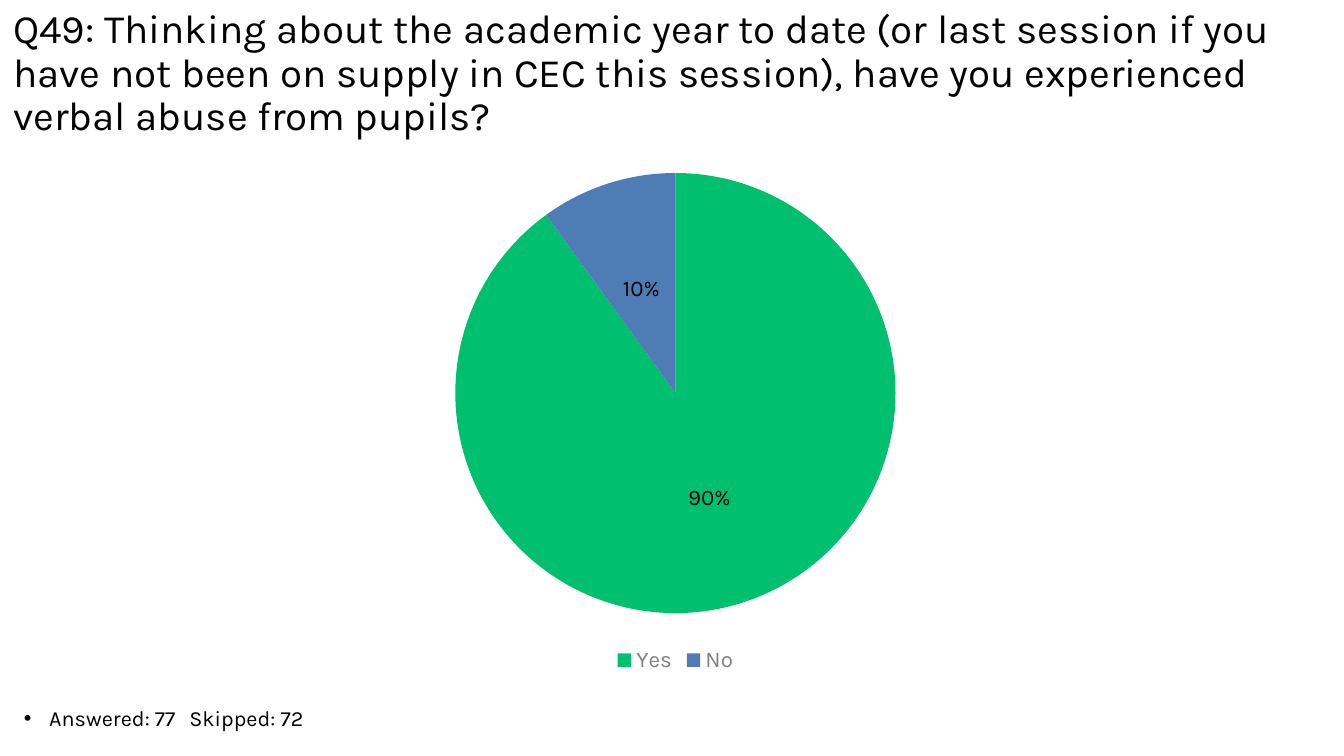
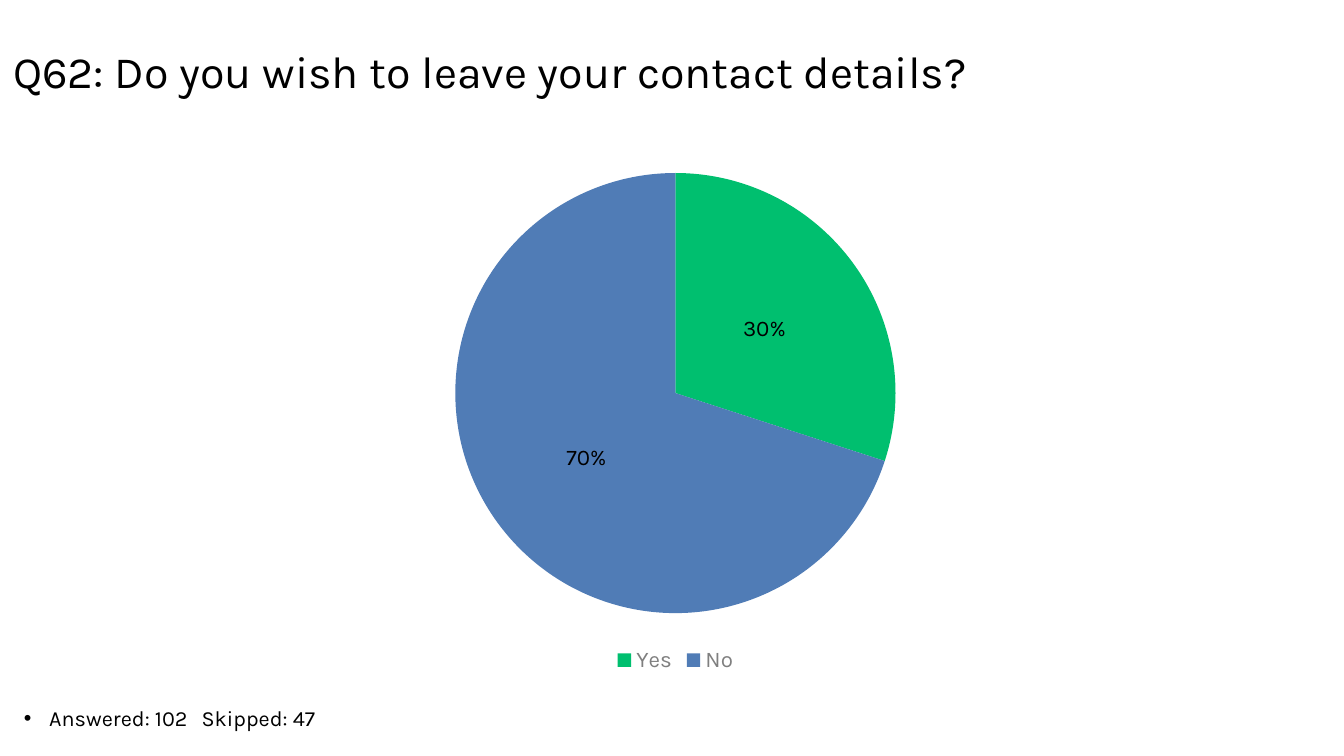
from lxml import etree
from pptx import Presentation
from pptx.chart.data import CategoryChartData
from pptx.dml.color import RGBColor
from pptx.enum.chart import XL_CHART_TYPE, XL_LABEL_POSITION, XL_LEGEND_POSITION
from pptx.enum.text import MSO_ANCHOR
from pptx.oxml.ns import qn
from pptx.util import Cm, Pt

PIE = XL_CHART_TYPE.PIE
LABEL_CENTER = XL_LABEL_POSITION.CENTER
LEGEND_BOTTOM = XL_LEGEND_POSITION.BOTTOM
TOP, MIDDLE = MSO_ANCHOR.TOP, MSO_ANCHOR.MIDDLE

FONT = "Karla"
BLACK = RGBColor(0x00, 0x00, 0x00)
GRAY = RGBColor(0x7F, 0x7F, 0x7F)
GREEN = RGBColor(0x00, 0xBF, 0x6F)
BLUE = RGBColor(0x50, 0x7C, 0xB6)
ANSWER_COLORS = {"Yes": GREEN, "No": BLUE}

# Regions as left, top, width, height in centimetres
QUESTION_BOX = (0, 0.64, 25.4, 1.52)
PIE_BOX = (3.05, 2.92, 19.43, 9.91)
COUNTS_BOX = (0.2, 13.34, 22.86, 0.66)
BULLET_INDENT = Cm(0.48)

# Question, title size, shares of Yes and No, answered, skipped, tab stop in cm
RESULTS = [
    ("Q49: Thinking about the academic year to date (or last session if you "
     "have not been on supply in CEC this session), have you experienced "
     "verbal abuse from pupils?", 21.6, (0.9, 0.1), 77, 72, 3.13),
    ("Q62: Do you wish to leave your contact details?",
     24, (0.3, 0.7), 102, 47, 3.36),
]


def style_font(font, size, color=BLACK):
    font.name = FONT
    font.size = Pt(size)
    font.color.rgb = color


def add_text(slide, box, text, *, size, anchor=TOP, line_spacing=1.0, space_before=0):
    """Add a wrapped one-paragraph text box and return its paragraph."""
    text_box = slide.shapes.add_textbox(*map(Cm, box))
    frame = text_box.text_frame
    frame.word_wrap = True
    frame.vertical_anchor = anchor
    paragraph = frame.paragraphs[0]
    paragraph.line_spacing = line_spacing
    paragraph.space_before = Pt(space_before)
    run = paragraph.add_run()
    run.text = text
    style_font(run.font, size)
    return paragraph


def add_question(slide, box, question, size):
    add_text(slide, box, question, size=size, anchor=MIDDLE, line_spacing=0.9)


def add_counts(slide, box, answered, skipped, tab_stop):
    counts = add_text(slide, box, f"Answered: {answered}\tSkipped: {skipped}",
                      size=11.6, line_spacing=0.7, space_before=7.5)
    # Hanging bullet and the tab stop between the two counts
    properties = counts._p.get_or_add_pPr()
    properties.set("marL", str(BULLET_INDENT))
    properties.set("indent", str(-BULLET_INDENT))
    etree.SubElement(properties, qn("a:buFont"), typeface="Arial")
    etree.SubElement(properties, qn("a:buChar"), char="•")
    tabs = etree.SubElement(properties, qn("a:tabLst"))
    etree.SubElement(tabs, qn("a:tab"), pos=str(Cm(tab_stop)), algn="l")


def add_answer_pie(slide, box, shares):
    data = CategoryChartData(number_format="0%")
    data.categories = list(ANSWER_COLORS)
    data.add_series("Series 1", shares)
    chart = slide.shapes.add_chart(PIE, *map(Cm, box), data).chart
    chart.has_title = False
    style_font(chart.font, 18)

    # Legend below the pie
    chart.has_legend = True
    chart.legend.position = LEGEND_BOTTOM
    chart.legend.include_in_layout = False
    style_font(chart.legend.font, 12, GRAY)

    # Slices and their percentages
    plot = chart.plots[0]
    plot.vary_by_categories = True
    answers = plot.series[0]
    for index, color in enumerate(ANSWER_COLORS.values()):
        slice_format = answers.points[index].format
        slice_format.fill.solid()
        slice_format.fill.fore_color.rgb = color
        slice_format.line.fill.background()
    labels = answers.data_labels
    labels.show_value = True
    labels.position = LABEL_CENTER
    labels.number_format = "0%"
    labels.number_format_is_linked = False
    style_font(labels.font, 12)


def add_result_slide(deck, question, size, shares, answered, skipped, tab_stop):
    slide = deck.slides.add_slide(deck.slide_layouts[6])
    add_question(slide, QUESTION_BOX, question, size)
    add_counts(slide, COUNTS_BOX, answered, skipped, tab_stop)
    add_answer_pie(slide, PIE_BOX, shares)


def main():
    deck = Presentation()
    deck.slide_width, deck.slide_height = Cm(25.4), Cm(14.29)
    for result in RESULTS:
        add_result_slide(deck, *result)
    deck.save("out.pptx")


if __name__ == "__main__":
    main()
